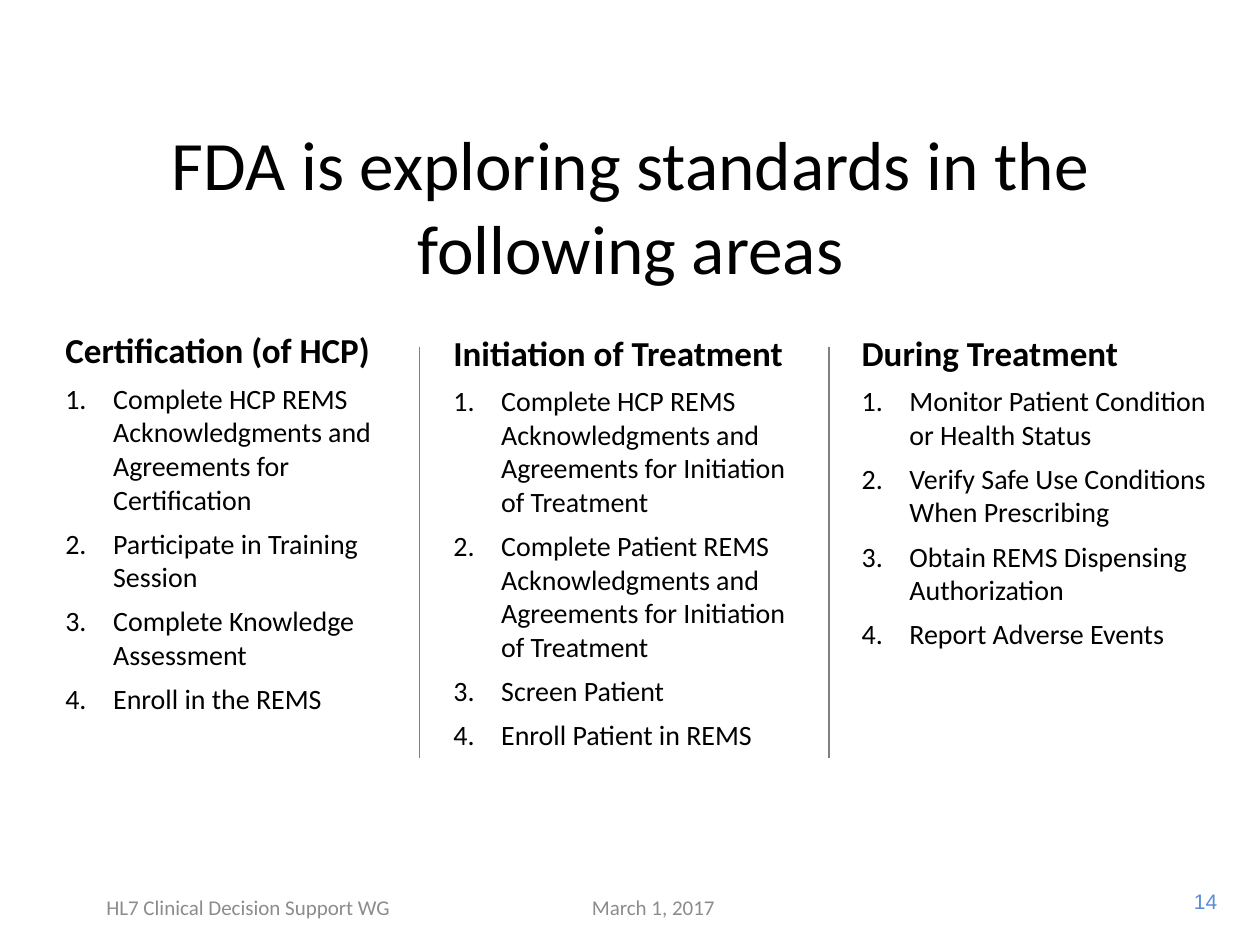
from lxml import etree
from pptx import Presentation
from pptx.dml.color import RGBColor
from pptx.enum.shapes import MSO_CONNECTOR
from pptx.enum.text import MSO_ANCHOR, PP_ALIGN
from pptx.oxml.ns import qn
from pptx.util import Inches, Pt

BLACK = RGBColor(0x00, 0x00, 0x00)
GRAY = RGBColor(0x8C, 0x8C, 0x8C)
RULE = RGBColor(0x80, 0x80, 0x80)
BLUE = RGBColor(0x55, 0x8E, 0xD5)
LEFT, CENTER, RIGHT = PP_ALIGN.LEFT, PP_ALIGN.CENTER, PP_ALIGN.RIGHT
TOP, MIDDLE = MSO_ANCHOR.TOP, MSO_ANCHOR.MIDDLE
STRAIGHT = MSO_CONNECTOR.STRAIGHT

deck = Presentation()
deck.slide_width, deck.slide_height = Inches(10), Inches(7.5)
slide = deck.slides.add_slide(deck.slide_layouts[6])


def add_box(left, top, width, height, anchor=TOP, wrap=True):
    box = slide.shapes.add_textbox(
        Inches(left), Inches(top), Inches(width), Inches(height))
    frame = box.text_frame
    frame.word_wrap = wrap
    frame.vertical_anchor = anchor
    return frame


def add_text(para, text, size, color=BLACK, align=LEFT, bold=False, font="Calibri"):
    para.alignment = align
    run = para.add_run()
    run.text = text
    run.font.size = Pt(size)
    run.font.name = font
    run.font.bold = bold
    run.font.color.rgb = color


title = add_box(0.35, 1.12, 9.31, 1.01, MIDDLE)
add_text(title.paragraphs[0], "FDA is exploring standards in the following areas",
         39.6, align=CENTER)

columns = [
    (0.42, 2.56, 2.92, 4.19, "Certification (of HCP)", [
        "Complete HCP REMS Acknowledgments and Agreements for Certification",
        "Participate in Training Session",
        "Complete Knowledge Assessment",
        "Enroll in the REMS"]),
    (3.5, 2.58, 3, 4.25, "Initiation of Treatment", [
        "Complete HCP REMS Acknowledgments and Agreements for Initiation of Treatment",
        "Complete Patient REMS Acknowledgments and Agreements for Initiation of Treatment",
        "Screen Patient",
        "Enroll Patient in REMS"]),
    (6.74, 2.58, 3, 3.86, "During Treatment", [
        "Monitor Patient Condition or Health Status",
        "Verify Safe Use Conditions When Prescribing",
        "Obtain REMS Dispensing Authorization",
        "Report Adverse Events"]),
]
for left, top, width, height, heading, steps in columns:
    frame = add_box(left, top, width, height)
    head = frame.paragraphs[0]
    head.space_after = Pt(6)
    add_text(head, heading, 20, bold=True)
    for step in steps:
        para = frame.add_paragraph()
        para.space_after = Pt(6)
        props = para._p.get_or_add_pPr()
        props.set("marL", str(Inches(0.38)))
        props.set("indent", str(-Inches(0.38)))
        etree.SubElement(props, qn("a:buFont"), typeface="+mj-lt")
        etree.SubElement(props, qn("a:buAutoNum"), type="arabicPeriod")
        add_text(para, step, 16)

for x in (3.33, 6.58):
    rule = slide.shapes.add_connector(
        STRAIGHT, Inches(x), Inches(2.75), Inches(x), Inches(6.02))
    rule.line.color.rgb = RULE
    rule.line.width = Pt(0.75)
    etree.SubElement(rule._element.spPr, qn("a:effectLst"))

for left, width, text in [(0.27, 3.4, "HL7 Clinical Decision Support WG"),
                          (4.02, 2.33, "March 1, 2017")]:
    foot = add_box(left, 7, width, 0.4, MIDDLE)
    add_text(foot.paragraphs[0], text, 12, GRAY, CENTER)

number = add_box(9.35, 7, 0.41, 0.3, wrap=False)
add_text(number.paragraphs[0], "14", 12, BLUE, RIGHT, font="Arial")

deck.save("out.pptx")
